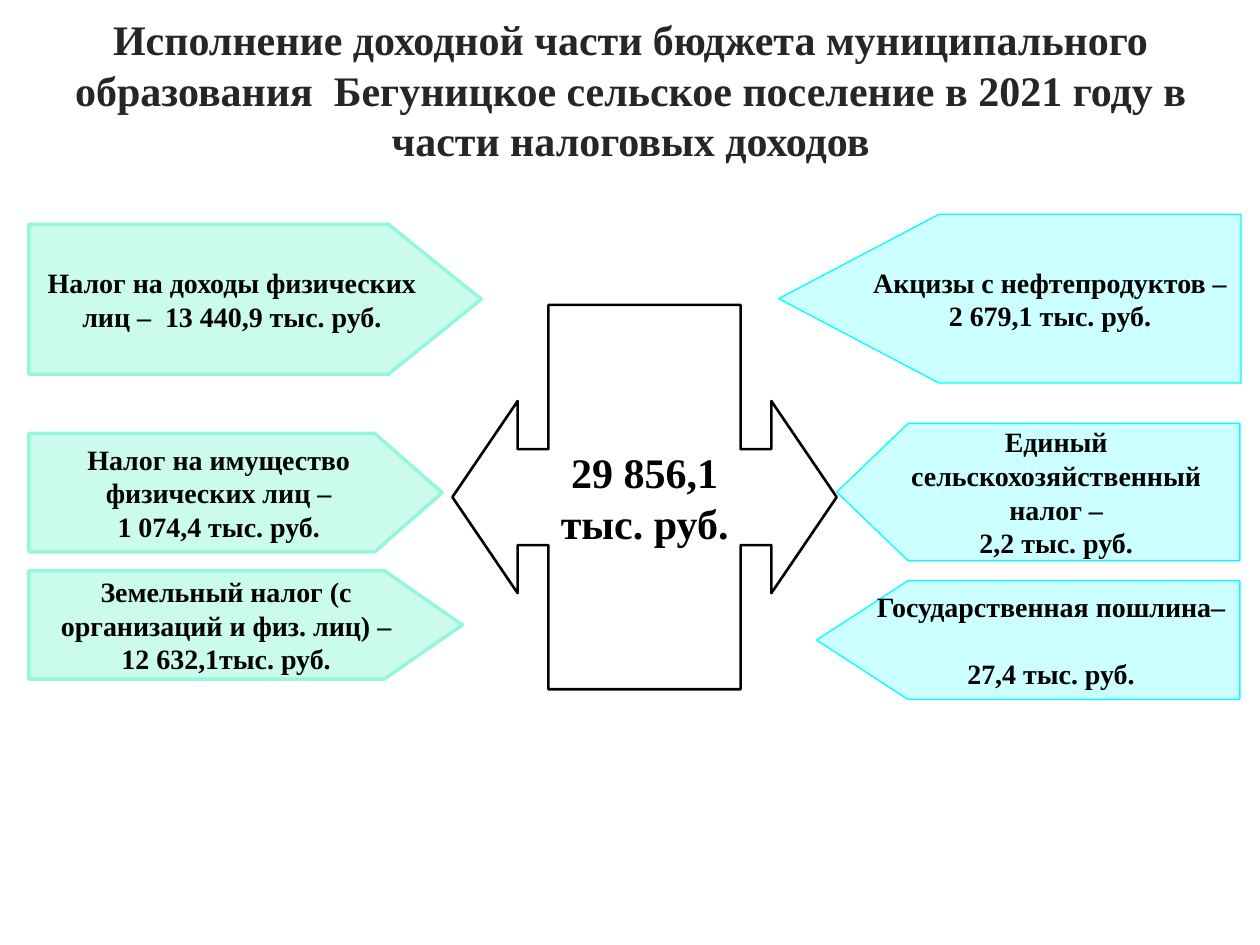
import pptx
import pptx.dml.color
import pptx.enum.shapes
import pptx.enum.text
import pptx.util

Inches = pptx.util.Inches
Pt = pptx.util.Pt
Shapes = pptx.enum.shapes.MSO_SHAPE
Anchor = pptx.enum.text.MSO_ANCHOR

TITLE = ("Исполнение доходной части бюджета муниципального образования  "
         "Бегуницкое сельское поселение в 2021 году в части налоговых доходов")
LEFT_STYLE = {"fill": "CAFBED", "line": "94F7DC", "width": 2}
RIGHT_STYLE = {"fill": "CCFFFF", "line": "00FFFF", "width": 0.75}
TOTAL_STYLE = {"fill": "FFFFFF", "line": "000000", "width": 1.5}
LEFT_TAXES = [
    ((0.23, 1.78, 3.59, 1.19), 0.62, ["Налог на доходы физических лиц –  13 440,9 тыс. руб."], 0),
    ((0.23, 3.44, 3.28, 0.94), 0.57, ["Налог на имущество физических лиц –", "1 074,4 тыс. руб."], 0),
    ((0.23, 4.53, 3.44, 0.86), 0.72,
     ["Земельный налог (с организаций и физ. лиц) –", "12 632,1тыс. руб."], 0),
]
RIGHT_TAXES = [
    ((6.18, 1.7, 3.67, 1.34), 0.95, ["Акцизы с нефтепродуктов –\v2 679,1 тыс. руб."], 0),
    ((6.64, 3.36, 3.2, 1.09), 0.52,
     ["Единый сельскохозяйственный налог –", "2,2 тыс. руб."], 0),
    ((6.48, 4.61, 3.36, 0.94), 0.77, ["Государственная пошлина–", "27,4 тыс. руб."], 19),
]


def color(value):
    return pptx.dml.color.RGBColor.from_string(value)


def set_values(target, values):
    for name, value in values.items():
        setattr(target, name, value)


def write_text(shape, lines, size, text_color="000000", gap=0, **frame_values):
    frame = shape.text_frame
    set_values(frame, {"word_wrap": True, "vertical_anchor": Anchor.MIDDLE, **frame_values})
    for index, line in enumerate(lines):
        paragraph = frame.paragraphs[0] if index == 0 else frame.add_paragraph()
        paragraph.text = line
        paragraph.alignment = pptx.enum.text.PP_ALIGN.CENTER
        if index and gap:
            paragraph.space_before = Pt(gap)
        for run in paragraph.runs:
            set_values(run.font, {"name": "Times New Roman", "size": Pt(size), "bold": True})
            run.font.color.rgb = color(text_color)


def add_styled_shape(slide, kind, box, style, adjustments, rotation):
    shape = slide.shapes.add_shape(kind, *map(Inches, box))
    shape.shadow.inherit = False
    shape.rotation = rotation
    for index, value in enumerate(adjustments):
        shape.adjustments[index] = value
    shape.fill.solid()
    shape.fill.fore_color.rgb = color(style["fill"])
    shape.line.color.rgb = color(style["line"])
    shape.line.width = Pt(style["width"])
    return shape


def add_title(slide, box):
    title = slide.shapes.add_textbox(*map(Inches, box))
    write_text(title, [TITLE], 24, "262626", vertical_anchor=Anchor.BOTTOM,
               margin_left=0, margin_right=0, margin_bottom=0)


def add_total(slide, box):
    total = add_styled_shape(slide, Shapes.UP_DOWN_ARROW_CALLOUT, box, TOTAL_STYLE,
                             [0.25, 0.25, 0.17, 0.5], 270)
    write_text(total, ["29 856,1", "тыс. руб."], 24, word_wrap=False)
    total.text_frame._txBody.bodyPr.set("vert", "eaVert")


def add_taxes(slide, taxes, style, rotation):
    for box, point, lines, gap in taxes:
        tax = add_styled_shape(slide, Shapes.PENTAGON, box, style, [point], rotation)
        write_text(tax, lines, 16, gap=gap)
        if rotation:
            tax.text_frame._txBody.bodyPr.set("rot", str(rotation * 60000))


def main():
    presentation = pptx.Presentation()
    set_values(presentation, {"slide_width": Inches(10), "slide_height": Inches(7.5)})
    slide = presentation.slides.add_slide(presentation.slide_layouts[6])
    add_title(slide, (0.2, 0.16, 9.61, 1.15))
    add_total(slide, (3.59, 2.42, 3.05, 3.05))
    add_taxes(slide, RIGHT_TAXES, RIGHT_STYLE, 180)
    add_taxes(slide, LEFT_TAXES, LEFT_STYLE, 0)
    presentation.save("out.pptx")


if __name__ == "__main__":
    main()
